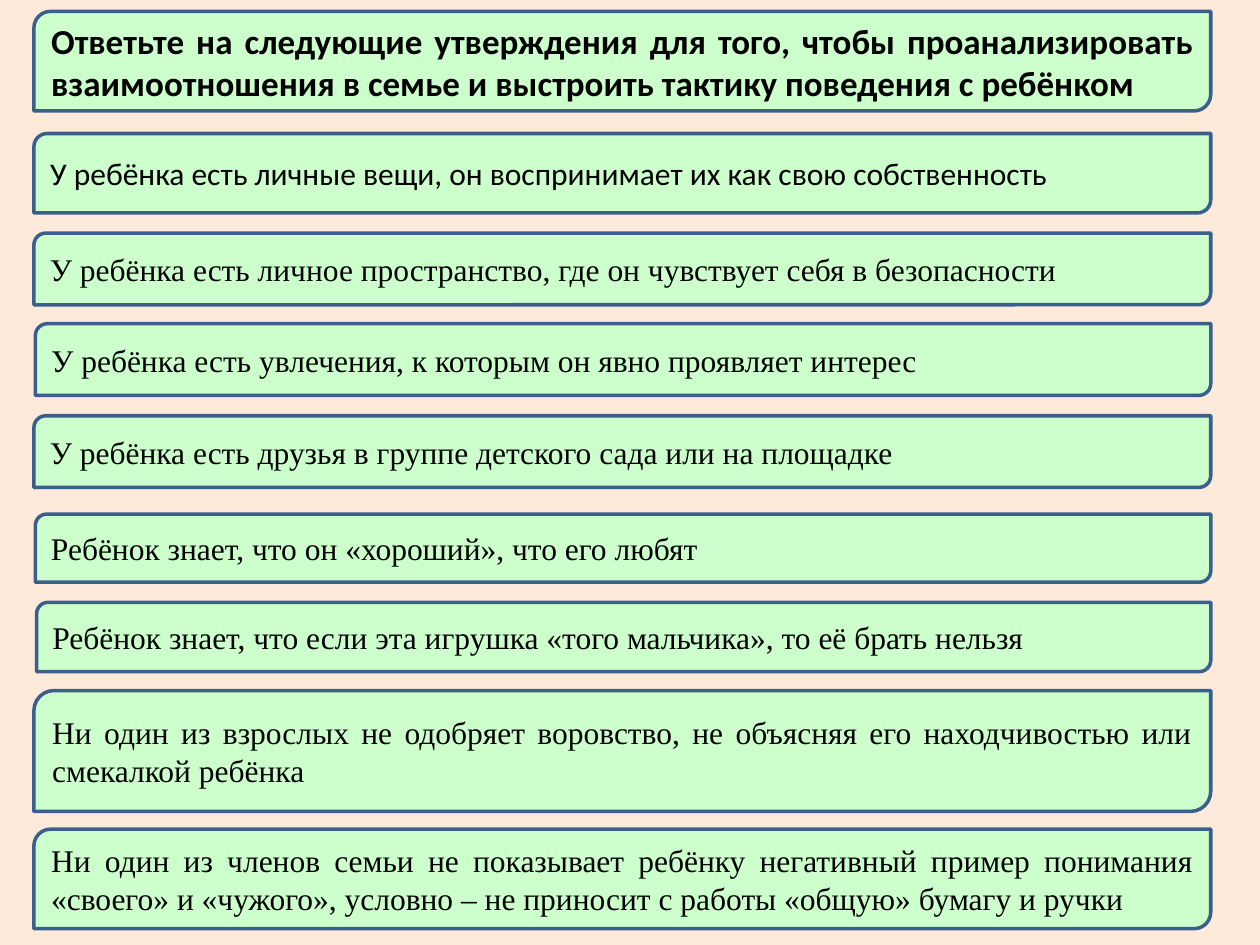
from pptx import Presentation
from pptx.dml.color import RGBColor
from pptx.enum import shapes, text
from pptx.util import Pt

SERIF = "Times New Roman"
SANS = "Calibri"
RIGHT = 691.9

HEADING = ("Ответьте на следующие утверждения для того, чтобы проанализировать "
           "взаимоотношения в семье и выстроить тактику поведения с ребёнком")

# left, top, height, font, wording
STATEMENTS = [
    (19.4, 76.3, 45.4, SANS,
     "У ребёнка есть личные вещи, он воспринимает их как свою собственность"),
    (19.4, 133.2, 41, SERIF,
     "У ребёнка есть личное пространство, где он чувствует себя в безопасности"),
    (20.2, 185, 41, SERIF,
     "У ребёнка есть увлечения, к которым он явно проявляет интерес"),
    (19.4, 237.6, 41, SERIF,
     "У ребёнка есть друзья в группе детского сада или на площадке"),
    (20.2, 293.8, 38.9, SERIF,
     "Ребёнок знает, что он «хороший», что его любят"),
    (20.9, 344.2, 39.6, SERIF,
     "Ребёнок знает, что если эта игрушка «того мальчика», то её брать нельзя"),
    (19.4, 394.6, 69.1, SERIF,
     "Ни один из взрослых не одобряет воровство, не объясняя его "
     "находчивостью или смекалкой ребёнка"),
    (19.4, 473.8, 56.9, SERIF,
     "Ни один из членов семьи не показывает ребёнку негативный пример "
     "понимания «своего» и «чужого», условно – не приносит с работы "
     "«общую» бумагу и ручки"),
]


def paint(color_format, color):
    color_format.rgb = RGBColor.from_string(color)


def add_panel(slide, left, top, height, font, wording, size=18, bold=False):
    """Add a green panel that reaches from left to the common right edge."""
    panel = slide.shapes.add_shape(
        shapes.MSO_SHAPE.ROUND_2_DIAG_RECTANGLE,
        Pt(left), Pt(top), Pt(RIGHT - left), Pt(height))
    panel.shadow.inherit = False
    panel.fill.solid()
    paint(panel.fill.fore_color, "CCFFCC")
    paint(panel.line.color, "3A5F8C")
    panel.line.width = Pt(2)

    frame = panel.text_frame
    frame.word_wrap = True
    frame.vertical_anchor = text.MSO_ANCHOR.MIDDLE
    paragraph = frame.paragraphs[0]
    paragraph.text = wording
    paragraph.alignment = text.PP_ALIGN.JUSTIFY
    paragraph.font.name = font
    paragraph.font.size = Pt(size)
    paragraph.font.bold = bold
    paint(paragraph.font.color, "000000")


def main():
    presentation = Presentation()
    presentation.slide_width = Pt(720)
    presentation.slide_height = Pt(540)
    slide = presentation.slides.add_slide(presentation.slide_layouts[6])
    slide.background.fill.solid()
    paint(slide.background.fill.fore_color, "FDEADA")

    add_panel(slide, 19.4, 6.5, 56.9, SANS, HEADING, size=20, bold=True)
    for statement in STATEMENTS:
        add_panel(slide, *statement)
    presentation.save("out.pptx")


if __name__ == "__main__":
    main()
